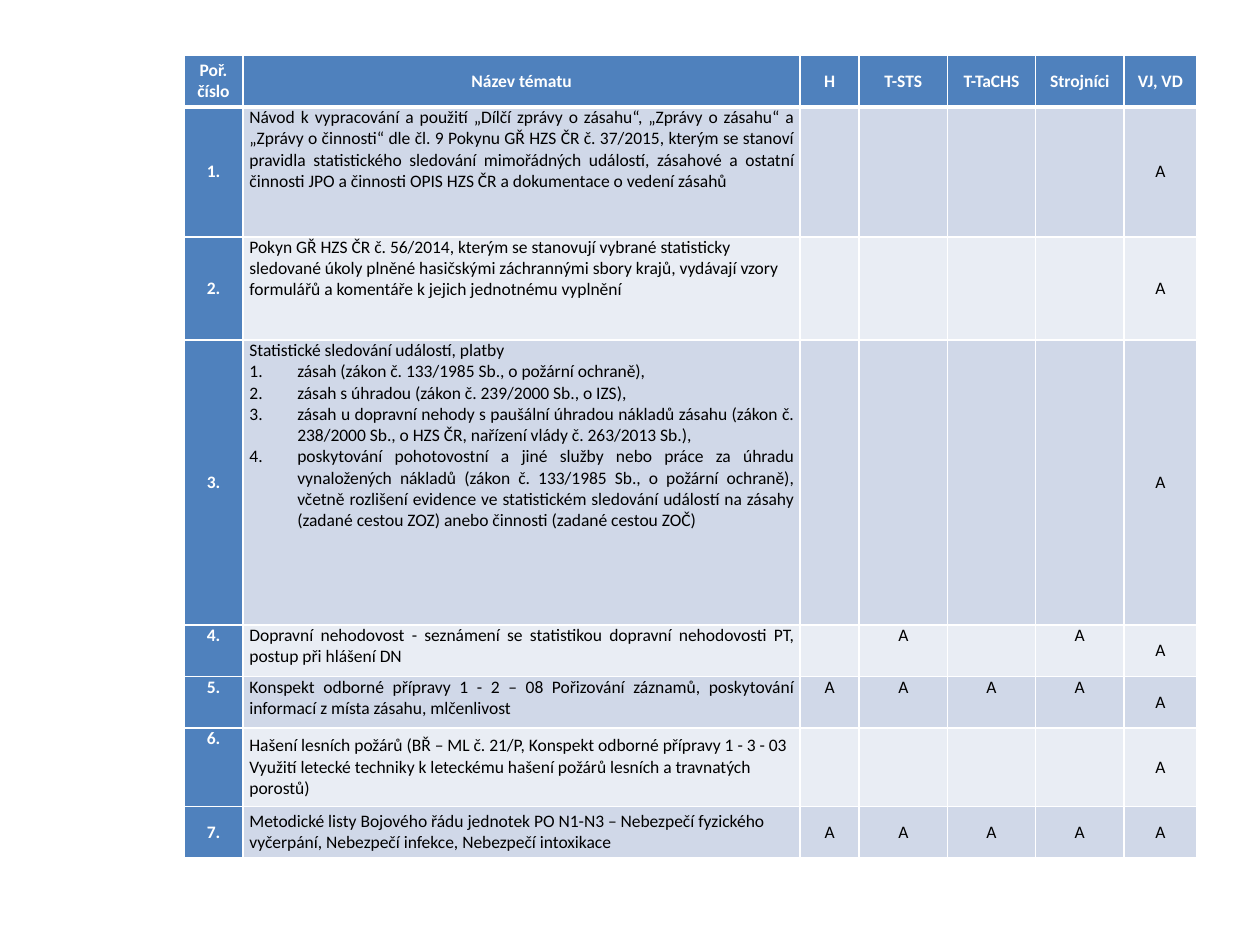
from lxml import etree
from pptx import Presentation
from pptx import util as u
from pptx.dml.color import RGBColor
from pptx.enum import text
from pptx.oxml import ns

COLORS = {
    "header": "4F81BD",
    "odd": "D0D8E8",
    "even": "E9EDF4",
    "white": "FFFFFF",
    "black": "000000",
}
TOP, MIDDLE = text.MSO_ANCHOR.TOP, text.MSO_ANCHOR.MIDDLE
LEFT, CENTER, JUSTIFY = text.PP_ALIGN.LEFT, text.PP_ALIGN.CENTER, text.PP_ALIGN.JUSTIFY

COLUMN_WIDTHS = [0.47, 4.42, 0.47, 0.7, 0.7, 0.7, 0.58]
ROW_HEIGHTS = [0.41, 1.03, 0.82, 2.26, 0.41, 0.41, 0.62, 0.41]
HEADINGS = ["Poř. číslo", "Název tématu", "H", "T-STS", "T-TaCHS", "Strojníci", "VJ, VD"]
MARK_COLUMNS = HEADINGS[2:]
LAST = "VJ, VD"

# Topic paragraphs (the first is plain, the others numbered), alignment,
# anchors of the number, topic and marks, and the marked columns.
TOPICS = [
    (["Návod k vypracování a použití „Dílčí zprávy o zásahu“, „Zprávy o zásahu“ a "
      "„Zprávy o činnosti“ dle čl. 9 Pokynu GŘ HZS ČR č. 37/2015, kterým se stanoví "
      "pravidla statistického sledování mimořádných událostí, zásahové a ostatní "
      "činnosti JPO a činnosti OPIS HZS ČR a dokumentace o vedení zásahů"],
     JUSTIFY, (MIDDLE, TOP, MIDDLE), [LAST]),
    (["Pokyn GŘ HZS ČR č. 56/2014, kterým se stanovují vybrané statisticky "
      "sledované úkoly plněné hasičskými záchrannými sbory krajů, vydávají vzory "
      "formulářů a komentáře k jejich jednotnému vyplnění"],
     LEFT, (MIDDLE, TOP, MIDDLE), [LAST]),
    (["Statistické sledování událostí, platby",
      "zásah (zákon č. 133/1985 Sb., o požární ochraně),",
      "zásah s úhradou (zákon č. 239/2000 Sb., o IZS),",
      "zásah u dopravní nehody s paušální úhradou nákladů zásahu (zákon č. "
      "238/2000 Sb., o HZS ČR, nařízení vlády č. 263/2013 Sb.),",
      "poskytování pohotovostní a jiné služby nebo práce za úhradu vynaložených "
      "nákladů (zákon č. 133/1985 Sb., o požární ochraně), včetně rozlišení evidence "
      "ve statistickém sledování událostí na zásahy (zadané cestou ZOZ) anebo "
      "činnosti (zadané cestou ZOČ)"],
     JUSTIFY, (MIDDLE, TOP, MIDDLE), [LAST]),
    (["Dopravní nehodovost - seznámení se statistikou dopravní nehodovosti PT, "
      "postup při hlášení DN"],
     JUSTIFY, (TOP, TOP, TOP), ["T-STS", "Strojníci", LAST]),
    (["Konspekt odborné přípravy 1 - 2 – 08 Pořizování záznamů, poskytování "
      "informací z místa zásahu, mlčenlivost"],
     JUSTIFY, (TOP, TOP, TOP), MARK_COLUMNS),
    (["Hašení lesních požárů (BŘ – ML č. 21/P, Konspekt odborné přípravy 1 - 3 - 03 "
      "Využití letecké techniky k leteckému hašení požárů lesních a travnatých porostů)"],
     LEFT, (TOP, MIDDLE, MIDDLE), [LAST]),
    (["Metodické listy Bojového řádu jednotek PO N1-N3 – Nebezpečí fyzického "
      "vyčerpání, Nebezpečí infekce, Nebezpečí intoxikace"],
     LEFT, (MIDDLE, MIDDLE, MIDDLE), MARK_COLUMNS),
]


class SlideWriter:
    def __init__(self, slide, font="Calibri", size=10):
        self.slide = slide
        self.font = font
        self.size = size

    def table(self, left, top, widths, heights):
        frame = self.slide.shapes.add_table(
            len(heights), len(widths), u.Inches(left), u.Inches(top),
            u.Inches(sum(widths)), u.Inches(sum(heights)))
        for column, width in zip(frame.table.columns, widths):
            column.width = u.Inches(width)
        for row, height in zip(frame.table.rows, heights):
            row.height = u.Inches(height)
        return frame.table

    def borders(self, cell, top=1, bottom=1):
        properties = cell._tc.get_or_add_tcPr()
        for side, width in (("L", 1), ("R", 1), ("T", top), ("B", bottom)):
            line = etree.SubElement(properties, ns.qn(f"a:ln{side}"), w=str(u.Pt(width)))
            fill = etree.SubElement(line, ns.qn("a:solidFill"))
            etree.SubElement(fill, ns.qn("a:srgbClr"), val=COLORS["white"])

    def cell(self, cell, paragraphs, fill, align=CENTER, anchor=MIDDLE,
             color="black", bold=False):
        """Fill a cell; every paragraph after the first is a numbered item."""
        cell.fill.solid()
        cell.fill.fore_color.rgb = RGBColor.from_string(COLORS[fill])
        cell.margin_left = cell.margin_right = u.Inches(0.05)
        cell.margin_top = cell.margin_bottom = 0
        cell.vertical_anchor = anchor
        for index, words in enumerate(paragraphs):
            frame = cell.text_frame
            para = frame.add_paragraph() if index else frame.paragraphs[0]
            para.alignment = align
            if index:
                self.number(para)
            span = para.add_run()
            span.text = words
            span.font.name = self.font
            span.font.size = u.Pt(self.size)
            span.font.bold = bold
            span.font.color.rgb = RGBColor.from_string(COLORS[color])

    def number(self, para, indent=0.38):
        properties = para._p.get_or_add_pPr()
        properties.set("marL", str(u.Inches(indent)))
        properties.set("indent", str(-u.Inches(indent)))
        etree.SubElement(properties, ns.qn("a:buFont"), typeface="+mj-lt")
        etree.SubElement(properties, ns.qn("a:buAutoNum"), type="arabicPeriod")


def main():
    deck = Presentation()
    deck.slide_width, deck.slide_height = u.Inches(10), u.Inches(7.5)
    writer = SlideWriter(deck.slides.add_slide(deck.slide_layouts[6]))
    table = writer.table(1.46, 0.44, COLUMN_WIDTHS, ROW_HEIGHTS)

    for row in range(len(ROW_HEIGHTS)):
        for column in range(len(HEADINGS)):
            writer.borders(table.cell(row, column), top=3 if row == 1 else 1,
                           bottom=3 if row == 0 else 1)

    heading_style = {"fill": "header", "color": "white", "bold": True}
    for column, heading in enumerate(HEADINGS):
        writer.cell(table.cell(0, column), [heading], **heading_style)

    for row, (topic, align, anchors, marked) in enumerate(TOPICS, start=1):
        number_anchor, topic_anchor, mark_anchor = anchors
        band = "odd" if row % 2 else "even"
        writer.cell(table.cell(row, 0), [f"{row}."], anchor=number_anchor, **heading_style)
        writer.cell(table.cell(row, 1), topic, band, align, topic_anchor)
        for column, heading in enumerate(MARK_COLUMNS, start=2):
            writer.cell(table.cell(row, column), ["A"] if heading in marked else [], band,
                        anchor=MIDDLE if heading == LAST else mark_anchor)

    deck.save("out.pptx")


if __name__ == "__main__":
    main()
